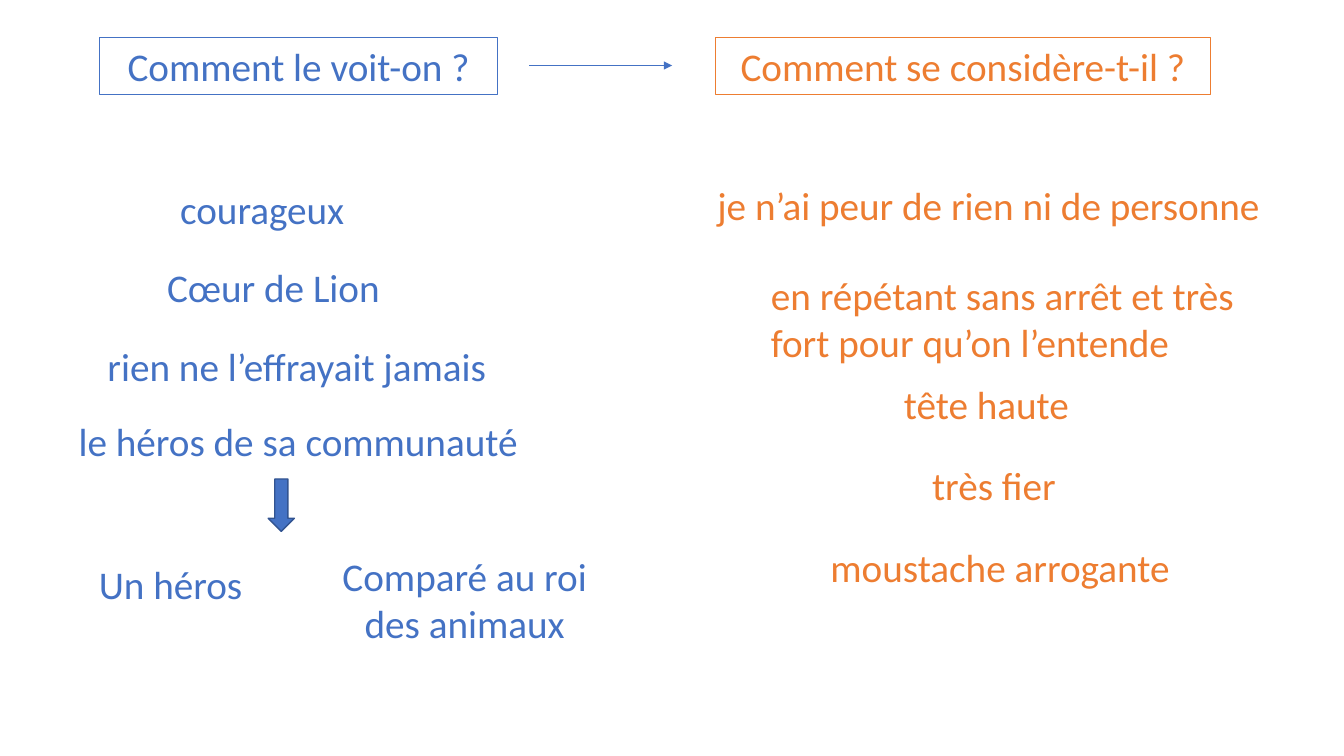
from lxml import etree
from pptx import Presentation
from pptx.dml.color import RGBColor
from pptx.enum.shapes import MSO_CONNECTOR, MSO_SHAPE
from pptx.enum.text import MSO_AUTO_SIZE, PP_ALIGN
from pptx.oxml.ns import qn
from pptx.util import Cm, Pt

STRAIGHT = MSO_CONNECTOR.STRAIGHT
RECTANGLE = MSO_SHAPE.RECTANGLE
DOWN_ARROW = MSO_SHAPE.DOWN_ARROW
FIT_SHAPE = MSO_AUTO_SIZE.SHAPE_TO_FIT_TEXT
LEFT = PP_ALIGN.LEFT
CENTER = PP_ALIGN.CENTER

BLUE = RGBColor(0x44, 0x72, 0xC4)
DARK_BLUE = RGBColor(0x32, 0x54, 0x91)
ORANGE = RGBColor(0xED, 0x7D, 0x31)

FONT_FORMAT = {"name": "Calibri", "size": Pt(28)}
ONE_LINE = 1.45
TWO_LINES = 2.64

# Each phrase: text, left and top within its column, width, height, alignment (cm)
SEEN_BY_OTHERS = [
    ("courageux", 2.79, 0.05, 6.93, ONE_LINE, LEFT),
    ("Cœur de Lion", 2.46, 2.0, 6.93, ONE_LINE, LEFT),
    ("rien ne l’effrayait jamais", 0.96, 4.01, 11.46, ONE_LINE, LEFT),
    ("le héros de sa communauté", 0.23, 5.89, 11.99, ONE_LINE, LEFT),
    ("Un héros", 0.74, 9.5, 4.52, ONE_LINE, LEFT),
    ("Comparé au roi des animaux", 6.45, 9.29, 7.52, TWO_LINES, CENTER),
]
SEEN_BY_HIMSELF = [
    ("je n’ai peur de rien ni de personne", 0, 0, 15.09, ONE_LINE, LEFT),
    ("en répétant sans arrêt et très fort pour qu’on l’entende",
     1.35, 2.26, 12.78, TWO_LINES, LEFT),
    ("tête haute", 4.7, 5.02, 5.51, ONE_LINE, LEFT),
    ("très fier", 5.41, 7.06, 3.73, ONE_LINE, LEFT),
    ("moustache arrogante", 2.85, 9.11, 10.11, ONE_LINE, LEFT),
]


def write_text(shape, text, color, alignment):
    frame = shape.text_frame
    frame.word_wrap = True
    frame.auto_size = FIT_SHAPE
    paragraph = frame.paragraphs[0]
    paragraph.alignment = alignment
    run = paragraph.add_run()
    run.text = text
    for name, value in FONT_FORMAT.items():
        setattr(run.font, name, value)
    run.font.color.rgb = color


def add_heading(slide, text, left, top, width, color):
    shape = slide.shapes.add_shape(
        RECTANGLE, Cm(left), Cm(top), Cm(width), Cm(ONE_LINE))
    shape.shadow.inherit = False
    shape.fill.background()
    shape.line.color.rgb = color
    shape.line.width = Pt(0.75)
    write_text(shape, text, color, CENTER)


def add_heading_arrow(slide, left, right, middle):
    connector = slide.shapes.add_connector(
        STRAIGHT, Cm(left), Cm(middle), Cm(right), Cm(middle))
    connector.line.color.rgb = BLUE
    connector.line.width = Pt(0.5)
    line = connector.line._get_or_add_ln()
    etree.SubElement(line, qn("a:tailEnd"), type="triangle")
    etree.SubElement(connector._element.spPr, qn("a:effectLst"))


def add_header(slide, left, top):
    """Place both questions and the arrow that leads from one to the other."""
    add_heading(slide, "Comment le voit-on ?", left, top, 10.03, BLUE)
    add_heading_arrow(slide, left + 10.83, left + 14.43, top + 0.71)
    add_heading(slide, "Comment se considère-t-il ?", left + 15.52, top, 12.47, ORANGE)


def add_phrases(slide, phrases, left, top, color):
    for text, offset_x, offset_y, width, height, alignment in phrases:
        box = slide.shapes.add_textbox(
            Cm(left + offset_x), Cm(top + offset_y), Cm(width), Cm(height))
        write_text(box, text, color, alignment)


def add_conclusion_arrow(slide, left, top):
    arrow = slide.shapes.add_shape(
        DOWN_ARROW, Cm(left), Cm(top), Cm(0.66), Cm(1.32))
    arrow.shadow.inherit = False
    arrow.fill.solid()
    arrow.fill.fore_color.rgb = BLUE
    arrow.line.color.rgb = DARK_BLUE
    arrow.line.width = Pt(1)


def add_others_column(slide, left, top):
    add_phrases(slide, SEEN_BY_OTHERS, left, top, BLUE)
    add_conclusion_arrow(slide, left + 5.26, top + 7.57)


def add_himself_column(slide, left, top):
    add_phrases(slide, SEEN_BY_HIMSELF, left, top, ORANGE)


def main():
    presentation = Presentation()
    presentation.slide_width = Cm(33.87)
    presentation.slide_height = Cm(19.05)
    slide = presentation.slides.add_slide(presentation.slide_layouts[6])
    add_header(slide, 2.51, 0.94)
    add_others_column(slide, 1.5, 4.5)
    add_himself_column(slide, 17.83, 4.45)
    presentation.save("out.pptx")


if __name__ == "__main__":
    main()
